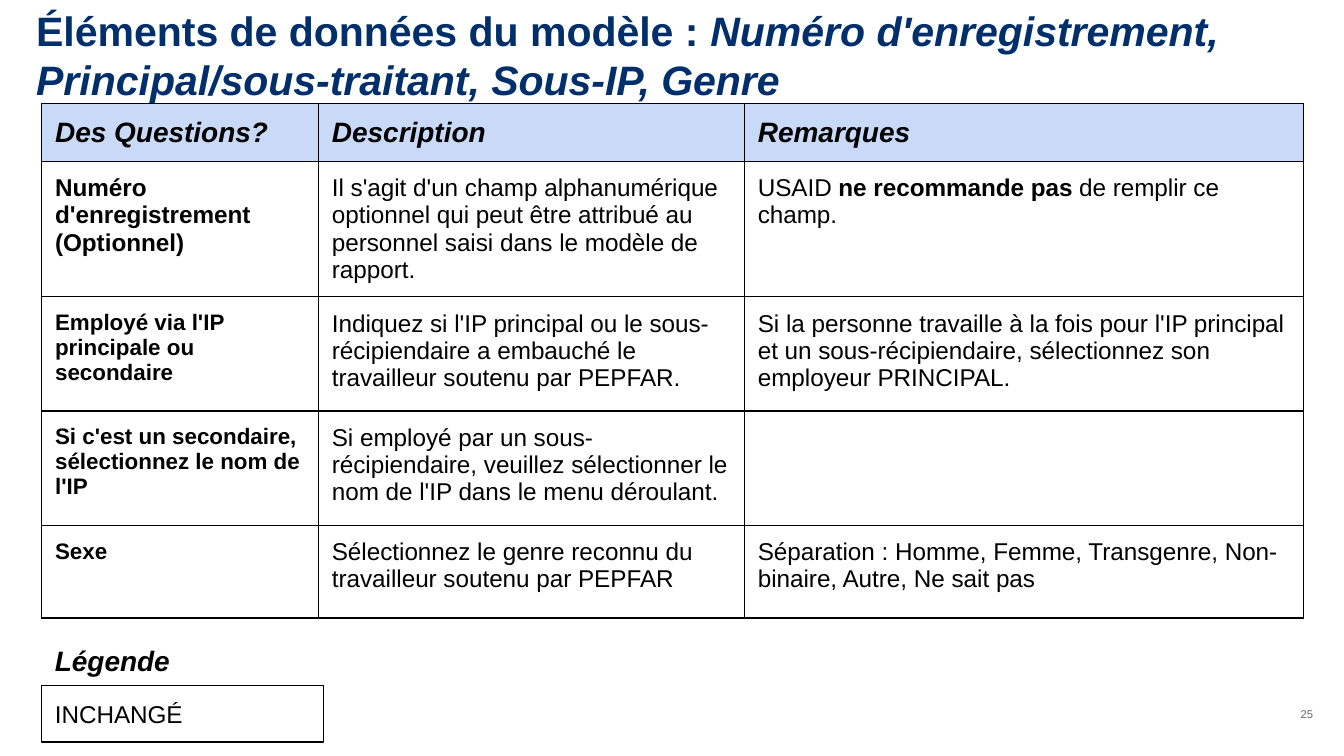
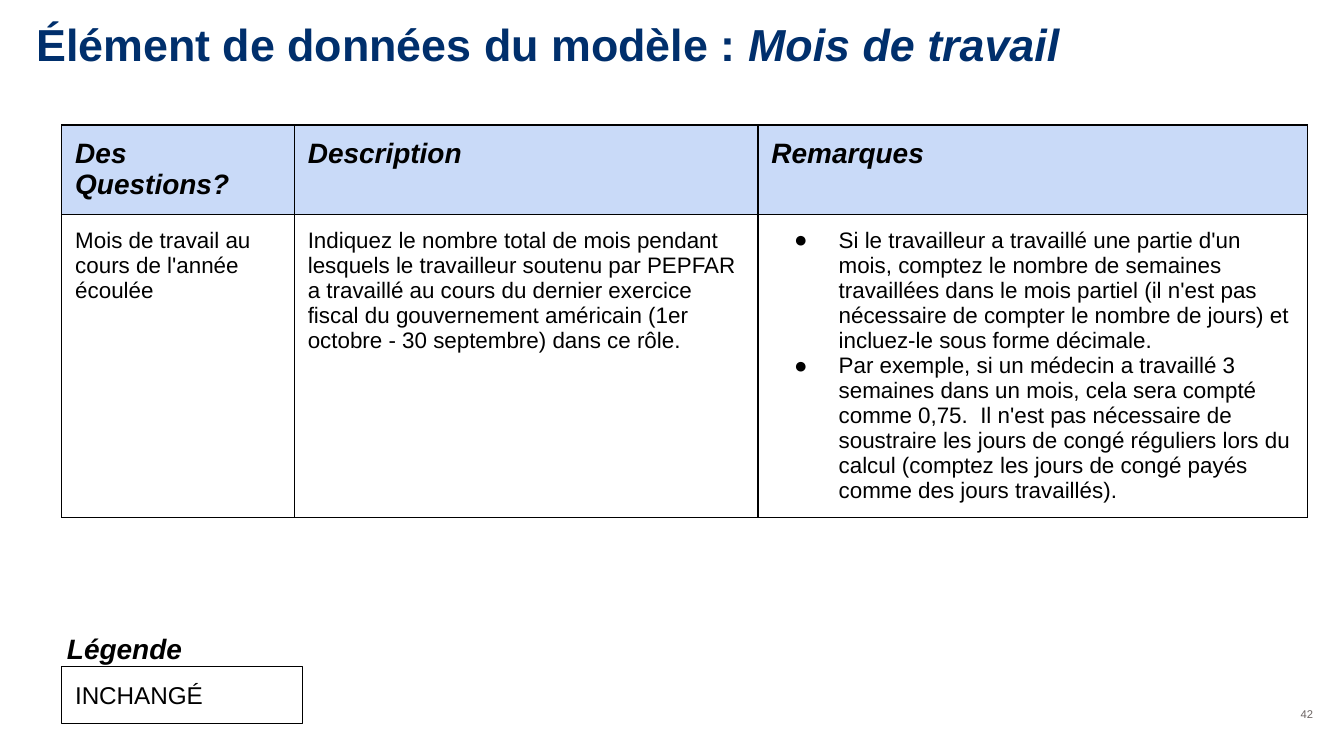
from pptx import Presentation
from pptx.dml.color import RGBColor
from pptx.enum.shapes import MSO_SHAPE
from pptx.enum.text import MSO_ANCHOR, MSO_AUTO_SIZE, PP_ALIGN
from pptx.oxml import parse_xml
from pptx.oxml.ns import nsdecls
from pptx.util import Pt

INSET = 7.2
HEADINGS = ("Des Questions?", "Description", "Remarques")


def color(value):
    return RGBColor.from_string(value)


def element(xml):
    tag, rest = xml.split(" ", 1)
    return parse_xml(f"<a:{tag} {nsdecls('a')} {rest}")


class Deck:
    font = "Arial"
    navy = "002F6C"
    black = "000000"
    gray = "6C6463"
    header_blue = "C9DAF8"
    border = 0.75

    def __init__(self):
        self.deck = Presentation()
        self.deck.slide_width = Pt(720)
        self.deck.slide_height = Pt(405)
        self.page = None

    def add_page(self):
        self.page = self.deck.slides.add_slide(self.deck.slide_layouts[5])

    def add_span(self, para, text, size, style="", ink=black):
        span = para.add_run()
        span.text = text
        span.font.name = self.font
        span.font.size = Pt(size)
        span.font.bold = "b" in style
        span.font.italic = "i" in style
        span.font.color.rgb = color(ink)

    def set_frame(self, frame, anchor=MSO_ANCHOR.TOP, vertical=INSET):
        frame.word_wrap = True
        frame.auto_size = MSO_AUTO_SIZE.NONE
        frame.vertical_anchor = anchor
        frame.margin_left = frame.margin_right = Pt(INSET)
        frame.margin_top = frame.margin_bottom = Pt(vertical)
        return frame.paragraphs[0]

    def title(self, label, subject, size, width, height):
        box = self.page.shapes.title
        box.left, box.top, box.width, box.height = Pt(12.2), Pt(-0.7), Pt(width), Pt(height)
        para = self.set_frame(box.text_frame, MSO_ANCHOR.BOTTOM)
        para.alignment = PP_ALIGN.LEFT
        self.add_span(para, label, size, "b", self.navy)
        self.add_span(para, subject, size, "bi", self.navy)

    def page_number(self, number):
        box = self.page.shapes.add_textbox(Pt(667.4), Pt(367.2), Pt(43.2), Pt(31))
        para = self.set_frame(box.text_frame, MSO_ANCHOR.MIDDLE, 3.6)
        para.alignment = PP_ALIGN.RIGHT
        self.add_span(para, str(number), 6, ink=self.gray)

    def add_bullet(self, para):
        properties = para._p.get_or_add_pPr()
        properties.set("marL", str(Pt(36)))
        properties.set("indent", str(Pt(-23.8)))
        properties.append(element(f'buClr ><a:srgbClr val="{self.black}"/></a:buClr>'))
        properties.append(element(f'buFont typeface="{self.font}"/>'))
        properties.append(element('buChar char="●"/>'))

    def fill_cell(self, cell, paragraphs, size, style, fill=None, bullets=False):
        cell.margin_left = cell.margin_right = Pt(INSET)
        cell.margin_top = cell.margin_bottom = Pt(INSET)
        if fill:
            cell.fill.solid()
            cell.fill.fore_color.rgb = color(fill)
        else:
            cell.fill.background()
        for index, side in enumerate(("lnL", "lnR", "lnT", "lnB")):
            cell._tc.get_or_add_tcPr().insert(index, element(
                f'{side} w="{Pt(self.border)}"><a:solidFill>'
                f'<a:srgbClr val="{self.black}"/></a:solidFill></a:{side}>'))
        for index, spans in enumerate(paragraphs):
            frame = cell.text_frame
            para = frame.add_paragraph() if index else frame.paragraphs[0]
            if bullets:
                self.add_bullet(para)
            for text, emphasis in spans:
                self.add_span(para, text, size, style + emphasis)

    def table(self, left, top, columns, heights, rows, question_style, sizes):
        frame = self.page.shapes.add_table(
            len(heights), len(columns), Pt(left), Pt(top), Pt(sum(columns)), Pt(sum(heights)))
        table = frame.table
        table.first_row = table.horz_banding = False
        for column, width in zip(table.columns, columns):
            column.width = Pt(width)
        for row, height in zip(table.rows, heights):
            row.height = Pt(height)
        for cell, heading in zip(table.rows[0].cells, HEADINGS):
            self.fill_cell(cell, [[(heading, "")]], 15, "bi", self.header_blue)
        for row, values, question_size in zip(list(table.rows)[1:], rows, sizes):
            body_size = max(sizes)
            for index, (cell, value) in enumerate(zip(row.cells, values)):
                paragraphs = [[(value, "")]] if isinstance(value, str) else value
                self.fill_cell(
                    cell, paragraphs if value else [],
                    body_size if index else question_size,
                    "" if index else question_style,
                    bullets=len(paragraphs) > 1)

    def legend(self, label_left, label_top, left, top, width):
        box = self.page.shapes.add_shape(
            MSO_SHAPE.RECTANGLE, Pt(left), Pt(top), Pt(width), Pt(30.4))
        box.shadow.inherit = False
        box.fill.background()
        box.line.color.rgb = color(self.black)
        box.line.width = Pt(self.border)
        para = self.set_frame(box.text_frame)
        para.alignment = PP_ALIGN.LEFT
        self.add_span(para, "INCHANGÉ", 13)
        label = self.page.shapes.add_textbox(Pt(label_left), Pt(label_top), Pt(83.5), Pt(32.4))
        self.add_span(self.set_frame(label.text_frame), "Légende", 15, "bi")


REGISTRATION_ROWS = [
    ("Numéro d'enregistrement (Optionnel)",
     "Il s'agit d'un champ alphanumérique optionnel qui peut être attribué au personnel "
     "saisi dans le modèle de rapport.",
     [[("USAID ", ""), ("ne recommande pas ", "b"), ("de remplir ce champ.", "")]]),
    ("Employé via l'IP principale ou secondaire",
     "Indiquez si l'IP principal ou le sous-récipiendaire a embauché le travailleur "
     "soutenu par PEPFAR.",
     "Si la personne travaille à la fois pour l'IP principal et un sous-récipiendaire, "
     "sélectionnez son employeur PRINCIPAL."),
    ("Si c'est un secondaire, sélectionnez le nom de l'IP",
     "Si employé par un sous-récipiendaire, veuillez sélectionner le nom de l'IP dans "
     "le menu déroulant.",
     ""),
    ("Sexe",
     "Sélectionnez le genre reconnu du travailleur soutenu par PEPFAR",
     "Séparation : Homme, Femme, Transgenre, Non-binaire, Autre, Ne sait pas"),
]

MONTHS_ROWS = [
    ("Mois de travail au cours de l'année écoulée",
     "Indiquez le nombre total de mois pendant lesquels le travailleur soutenu par PEPFAR "
     "a travaillé au cours du dernier exercice fiscal du gouvernement américain "
     "(1er octobre - 30 septembre) dans ce rôle.",
     [[("Si le travailleur a travaillé une partie d'un mois, comptez le nombre de semaines "
        "travaillées dans le mois partiel (il n'est pas nécessaire de compter le nombre de "
        "jours) et incluez-le sous forme décimale.", "")],
      [("Par exemple, si un médecin a travaillé 3 semaines dans un mois, cela sera compté "
        "comme 0,75.  Il n'est pas nécessaire de soustraire les jours de congé réguliers "
        "lors du calcul (comptez les jours de congé payés comme des jours travaillés).", "")]]),
]


def main():
    deck = Deck()

    deck.add_page()
    deck.title("Éléments de données du modèle : ",
               "Numéro d'enregistrement, Principal/sous-traitant, Sous-IP, Genre",
               22, 707.8, 63.4)
    deck.page_number(25)
    deck.table(22.3, 55.4, (148.3, 228.2, 299.5), (31, 72, 61.2, 61.2, 49.7),
               REGISTRATION_ROWS, "b", (13, 12, 12, 12))
    deck.legend(22.3, 337.7, 22.3, 367.2, 151.2)

    deck.add_page()
    deck.title("Élément de données du modèle : ", "Mois de travail", 24, 671, 45.4)
    deck.page_number(42)
    deck.table(33.1, 67, (124.6, 248.4, 294.5), (47.7, 162.3), MONTHS_ROWS, "", (12,))
    deck.legend(28.8, 331.2, 33.1, 357.1, 128.9)

    deck.deck.save("out.pptx")


if __name__ == "__main__":
    main()
